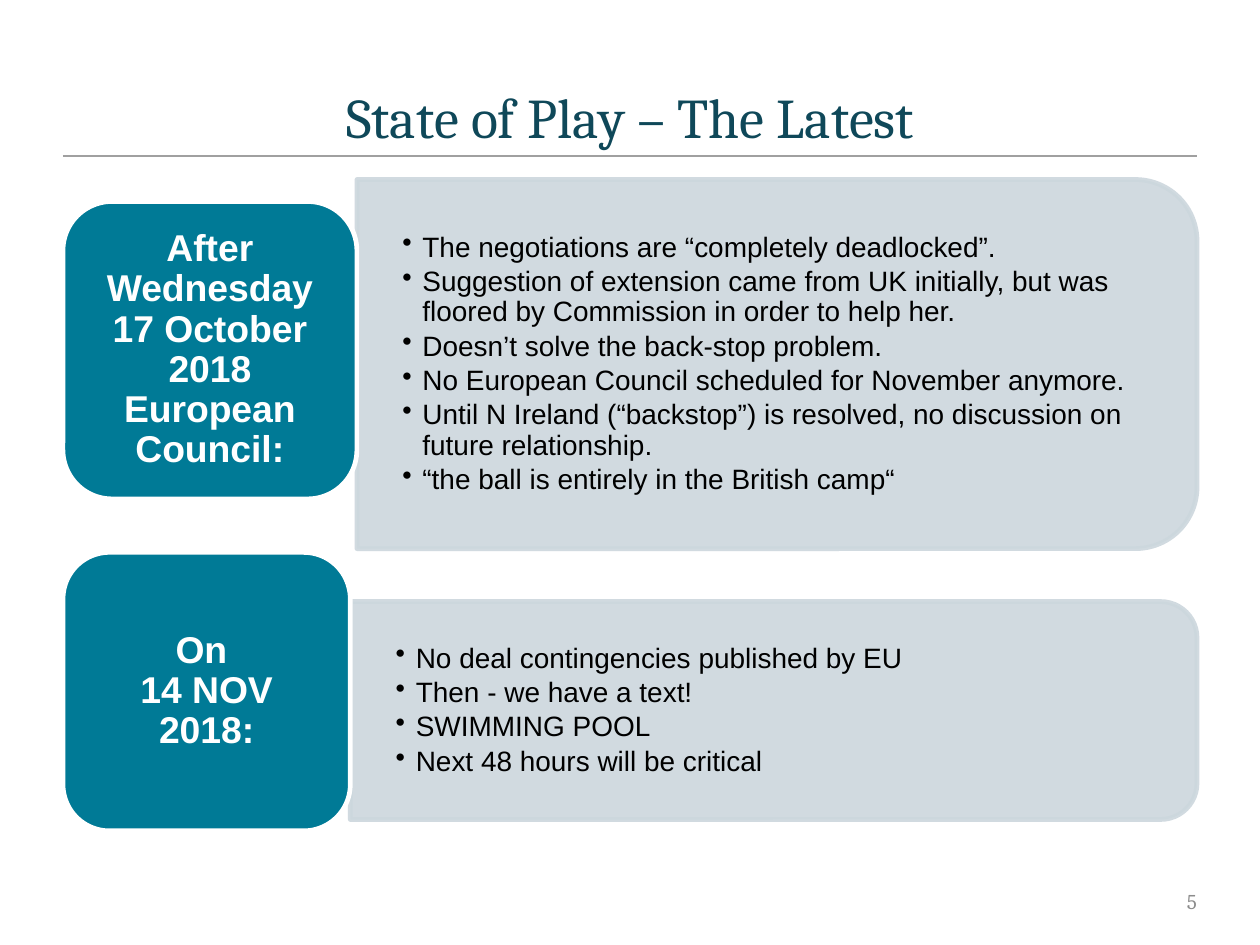
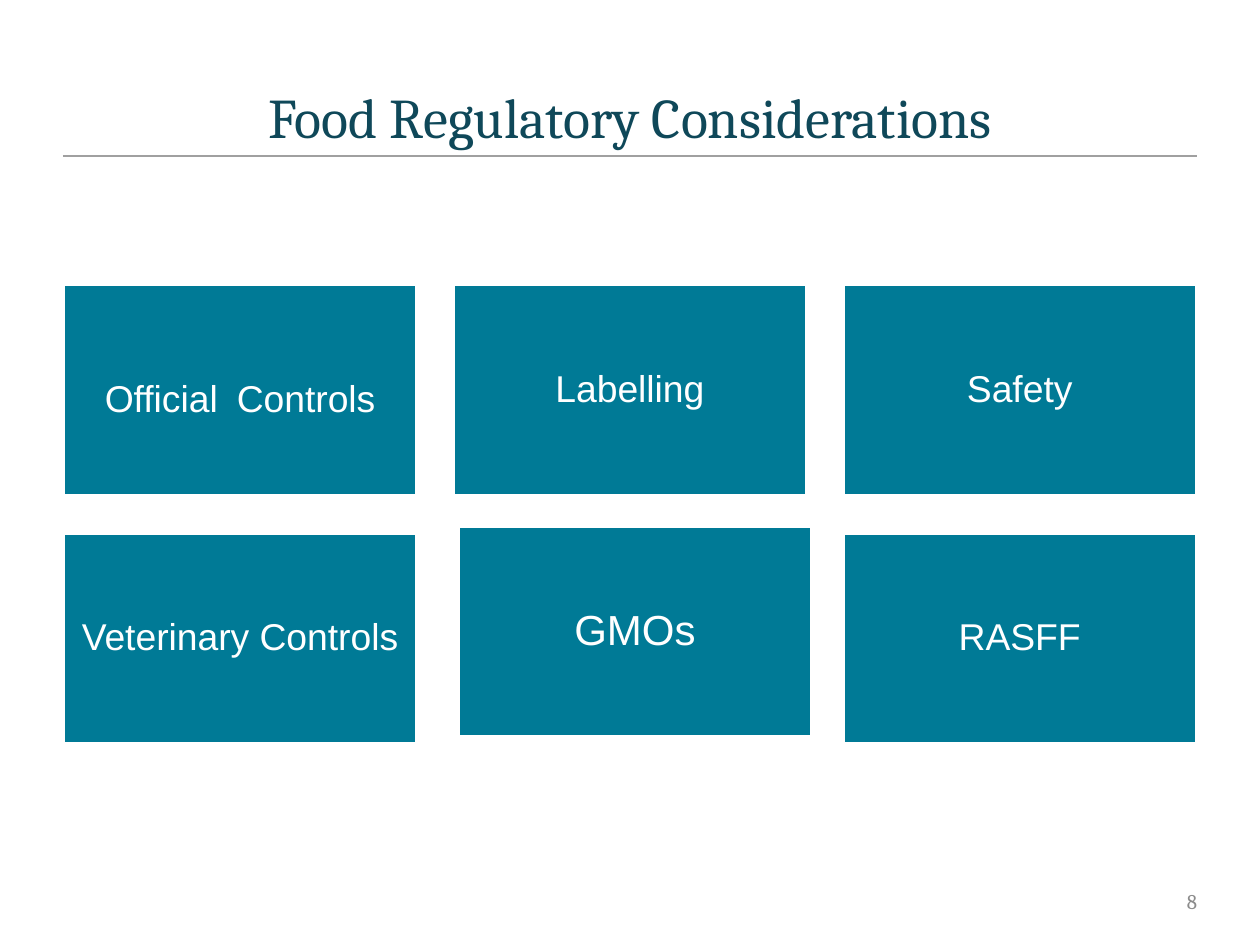
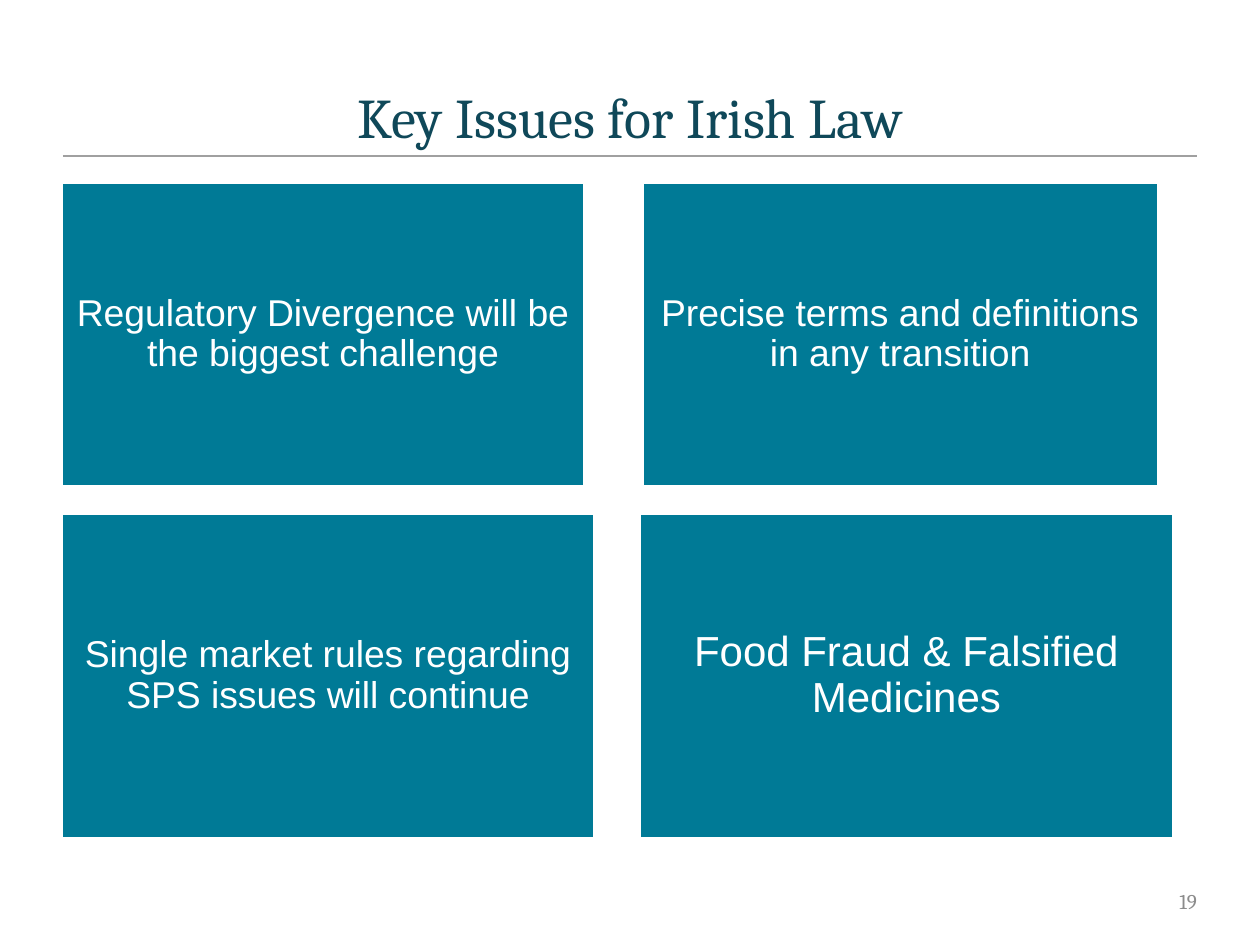
from lxml.etree import SubElement as Sub
from pptx import Presentation
from pptx.dml.color import RGBColor as RGB
from pptx.enum.shapes import MSO_CONNECTOR as Link, MSO_SHAPE as Kind
from pptx.enum.text import MSO_ANCHOR as Anchor, PP_ALIGN as Align
from pptx.oxml.ns import qn
from pptx.util import Inches, Pt


class Theme:
    teal = RGB.from_string("007A96")
    mist = RGB.from_string("CCD7DD")
    navy = RGB.from_string("0F4859")
    rule = RGB.from_string("A0A0A0")
    grey = RGB.from_string("8C8C8C")
    white = RGB.from_string("FFFFFF")
    black = RGB.from_string("000000")
    serif, sans = "Cambria", "Arial"
    title, large, label, body, foot = 24, 18, 16, 12, 9
    edge = Pt(2)


# Grid: 100 columns by 75 rows of square cells
COLS, ROWS = 100, 75
CELL = Inches(7.5) / COLS
LEFT, RIGHT = 5, 95
SPAN = RIGHT - LEFT

deck = Presentation()
deck.slide_width = round(COLS * CELL)
deck.slide_height = round(ROWS * CELL)


def place(slide, kind, box, fill=None, line=None):
    """Add a shape, or a text box if kind is None, at a box in cells."""
    spot = [round(n * CELL) for n in box]
    if kind is None:
        return slide.shapes.add_textbox(*spot)
    shape = slide.shapes.add_shape(kind, *spot)
    shape.shadow.inherit = False
    shape.fill.solid()
    shape.fill.fore_color.rgb = fill
    shape.line.color.rgb = line
    shape.line.width = Theme.edge
    return shape


def write(shape, paras, color, font=Theme.sans, align=Align.CENTER,
          anchor=Anchor.MIDDLE, pad=(0.07, 0.07, 0.07, 0.07),
          bold=False, lead=0.9, after=0.35, dot=False):
    """Fill a shape with paragraphs, each a list of (text, size) runs."""
    frame = shape.text_frame
    frame.word_wrap = True
    frame.vertical_anchor = anchor
    (frame.margin_left, frame.margin_top,
     frame.margin_right, frame.margin_bottom) = map(Inches, pad)
    for i, runs in enumerate(paras):
        para = frame.add_paragraph() if i else frame.paragraphs[0]
        if dot:
            props = para._p.get_or_add_pPr()
            props.set("marL", str(Inches(0.12)))
            props.set("indent", str(-Inches(0.12)))
            Sub(props, qn("a:buChar"), char="•")
        para.alignment = align
        para.line_spacing = lead
        para.space_after = Pt(after * runs[0][1])
        for text, size in runs:
            if text == "\v":
                para.add_line_break()
                continue
            run = para.add_run()
            run.text = text
            run.font.size = Pt(size)
            run.font.name = font
            run.font.bold = bold
            run.font.color.rgb = color


# Title, rule and number of every slide
pages = []
for title, number in [("State of Play – The Latest", "5"),
                      ("Food Regulatory Considerations", "8"),
                      ("Key Issues for Irish Law", "19")]:
    page = deck.slides.add_slide(deck.slide_layouts[6])
    pages.append(page)
    rule = page.shapes.add_connector(
        Link.STRAIGHT, *[round(n * CELL) for n in (LEFT, 12.4, RIGHT, 12.4)])
    rule.line.color.rgb = Theme.rule
    rule.line.width = Pt(1)
    Sub(rule._element.spPr, qn("a:effectLst"))
    write(place(page, None, (LEFT, 5.75, SPAN, 6.65)),
          [[(title, Theme.title)]], Theme.navy, Theme.serif,
          anchor=Anchor.BOTTOM, pad=(0.1, 0.05, 0.1, 0.04), lead=1, after=0)
    write(place(page, None, (72.5, 69.5, 22.5, 4)),
          [[(number, Theme.foot)]], Theme.grey, Theme.serif,
          align=Align.RIGHT, pad=(0.1, 0.05, 0, 0.05), lead=1, after=0)
news, food, law = pages

# Slide 1: label and panel rows, as (label top, width, height, panel top, height)
stages = [
    ((16, 23.33, 23.6, 14.25, 29.3),
     ["After Wednesday 17 October 2018 European Council:"],
     ["The negotiations are “completely deadlocked”.",
      "Suggestion of extension came from UK initially, but was floored by "
      "Commission in order to help her.",
      "Doesn’t solve the back-stop problem.",
      "No European Council scheduled for November anymore.",
      "Until N Ireland (“backstop”) is resolved, no discussion on future "
      "relationship.",
      "“the ball is entirely in the British camp“"]),
    ((43.85, 22.8, 22.1, 47.75, 17.3),
     ["On ", "\v", "14 NOV 2018:"],
     ["No deal contingencies published by EU",
      "Then - we have a text!",
      "SWIMMING POOL",
      "Next 48 hours will be critical"]),
]
for (top, wide, high, ptop, phigh), label, points in stages:
    start = LEFT + wide
    pwide = RIGHT - start
    # The panel is turned a quarter, so its sides swap about its centre
    turn = (pwide - phigh) / 2
    panel = place(news, Kind.ROUND_2_SAME_RECTANGLE,
                  (start + turn, ptop - turn, phigh, pwide),
                  Theme.mist, Theme.mist)
    panel.rotation = 90
    for tint in panel._element.spPr.iter(qn("a:srgbClr")):
        Sub(tint, qn("a:alpha"), val="90000")
    write(place(news, None, (start, ptop, pwide - 0.05 * phigh, phigh)),
          [[(point, Theme.body)] for point in points], Theme.black,
          align=Align.LEFT, pad=(0.27, 0.14, 0.27, 0.14), after=0.15, dot=True)
    write(place(news, Kind.ROUNDED_RECTANGLE, (LEFT, top, wide, high),
                Theme.teal, Theme.white),
          [[(part, Theme.label) for part in label]], Theme.white,
          pad=(0.07, 0.03, 0.07, 0.03), bold=True)

# Slide 2: three by two tiles, gap a tenth of the width, one tile nudged
wide = SPAN / 3.2
high, gap = 0.6 * wide, 0.1 * wide
topics = [
    [("Official", Theme.label), (" ", 29), ("Controls", Theme.label)],
    [("Labelling", Theme.label)],
    [("Safety", Theme.label)],
    [("Veterinary Controls", Theme.label)],
    [("GMOs", Theme.large)],
    [("RASFF", Theme.label)],
]
tiles = []
for i, runs in enumerate(topics):
    row, col = divmod(i, 3)
    dx, dy = (0.4, -0.55) if i == 4 else (0, 0)
    box = (LEFT + col * (wide + gap) + dx, 22.55 + row * (high + gap) + dy,
           wide, high)
    tiles.append((food, box, runs))

# Slide 3: two by two tiles, as (left, width) in rows of (top, height)
issues = [
    (14.4, 24.3, 4.8, 41.7, Theme.label,
     "Regulatory Divergence will be the biggest challenge"),
    (14.4, 24.3, 50.9, 41.1, Theme.label,
     "Precise terms and definitions in any transition"),
    (40.7, 25.9, 4.8, 42.5, Theme.label,
     "Single market rules regarding SPS issues will continue"),
    (40.7, 25.9, 50.7, 42.5, Theme.large,
     "Food Fraud & Falsified Medicines"),
]
for top, high, left, wide, size, text in issues:
    tiles.append((law, (left, top, wide, high), [(text, size)]))

# Draw the tiles of slides 2 and 3
for page, box, runs in tiles:
    write(place(page, Kind.RECTANGLE, box, Theme.teal, Theme.white),
          [runs], Theme.white)

deck.save("out.pptx")
